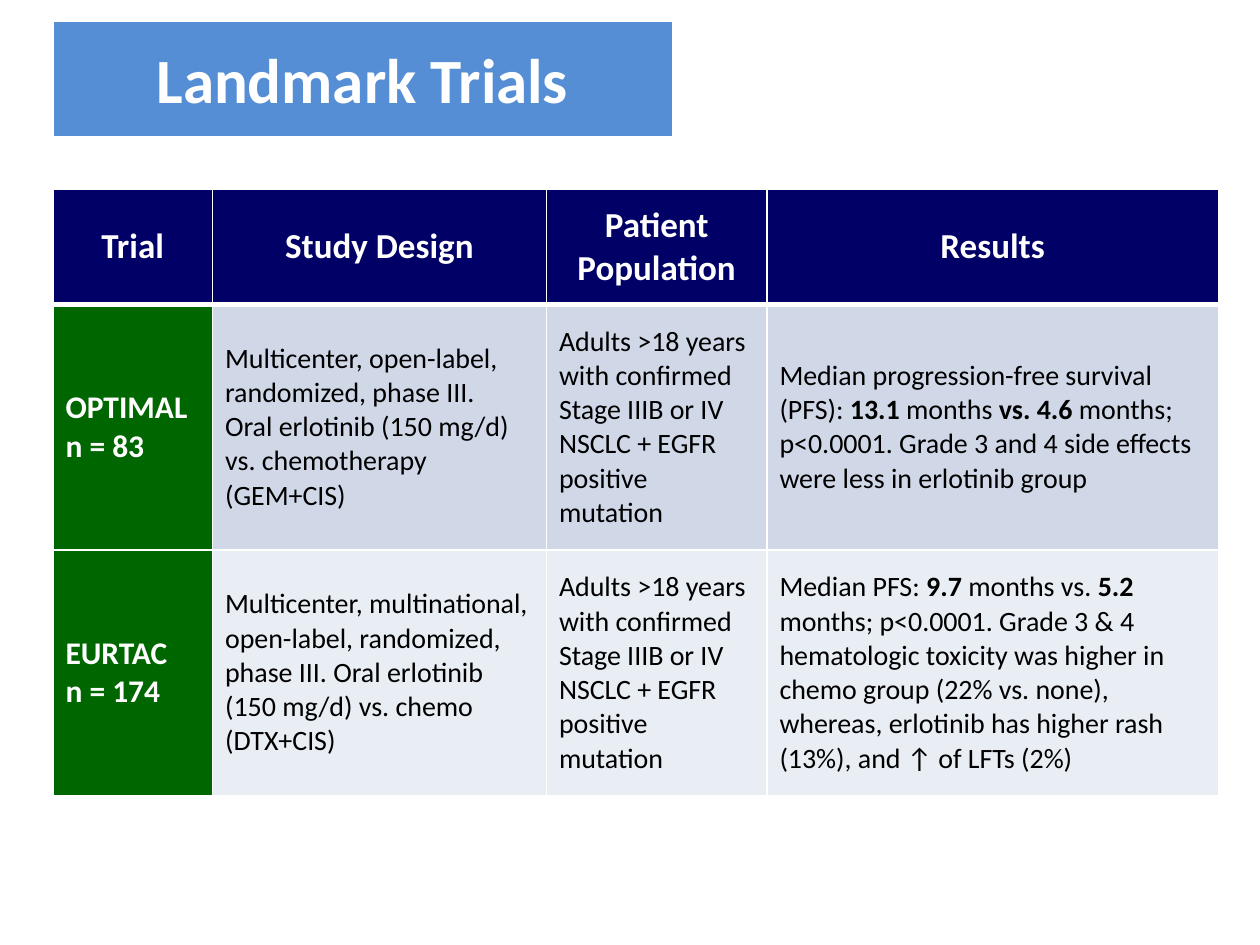
from lxml import etree
from pptx import Presentation
from pptx.dml.color import RGBColor
from pptx.enum.shapes import MSO_SHAPE
from pptx.enum.text import MSO_ANCHOR, PP_ALIGN
from pptx.oxml.ns import qn
from pptx.util import Pt

RECTANGLE = MSO_SHAPE.RECTANGLE
MIDDLE = MSO_ANCHOR.MIDDLE
LEFT, CENTER = PP_ALIGN.LEFT, PP_ALIGN.CENTER

WHITE = RGBColor(0xFF, 0xFF, 0xFF)
BLACK = RGBColor(0, 0, 0)
TITLE_BLUE = RGBColor(0x55, 0x8E, 0xD5)
HEADER_NAVY = RGBColor(0, 0, 0x66)
TRIAL_GREEN = RGBColor(0, 0x66, 0)
ROW_FILLS = [RGBColor(0xD0, 0xD8, 0xE8), RGBColor(0xE9, 0xED, 0xF4)]

FONT = "Calibri"
MARGIN_LEFT = 30.24
COLUMN_WIDTHS = [91.2, 190.8, 126, 258]
ROW_HEIGHTS = [65.9, 140.4, 140.4]

HEADERS = ["Trial", "Study Design", "Patient Population", "Results"]
POPULATION = ("Adults >18 years with confirmed Stage IIIB or IV "
              "NSCLC + EGFR positive mutation")
# Line breaks separate paragraphs; ** switches bold on and off.
TRIALS = [
    ["OPTIMAL\nn = 83",
     "Multicenter, open-label, randomized, phase III.\n"
     "Oral erlotinib (150 mg/d) vs. chemotherapy (GEM+CIS)",
     POPULATION,
     "Median progression-free survival (PFS): **13.1** months **vs. 4.6 **months; "
     "p<0.0001. Grade 3 and 4 side effects were less in erlotinib group"],
    ["EURTAC\nn = 174",
     "Multicenter, multinational, open-label, randomized, phase III. "
     "Oral erlotinib (150 mg/d) vs. chemo (DTX+CIS)",
     POPULATION,
     "Median PFS: **9.7** months vs. **5.2** months; p<0.0001. Grade 3 & 4 "
     "hematologic toxicity was higher in chemo group (22% vs. none), whereas, "
     "erlotinib has higher rash (13%), and ↑ of LFTs (2%)"],
]


def write_text(text_frame, text, size, color, bold=False, align=LEFT):
    """Write one paragraph per line, toggling bold at each ** mark."""
    for index, line in enumerate(text.split("\n")):
        paragraph = text_frame.add_paragraph() if index else text_frame.paragraphs[0]
        paragraph.alignment = align
        for part_index, part in enumerate(line.split("**")):
            run = paragraph.add_run()
            run.text = part
            run.font.name = FONT
            run.font.size = Pt(size)
            run.font.bold = bold or part_index % 2 == 1
            run.font.color.rgb = color


def add_title(slide, text):
    shape = slide.shapes.add_shape(
        RECTANGLE, Pt(MARGIN_LEFT), Pt(12), Pt(354), Pt(66))
    shape.shadow.inherit = False
    shape.fill.solid()
    shape.fill.fore_color.rgb = TITLE_BLUE
    shape.line.color.rgb = WHITE
    shape.line.width = Pt(0.75)
    shape.text_frame.word_wrap = True
    shape.text_frame.vertical_anchor = MIDDLE
    write_text(shape.text_frame, text, 36, WHITE, bold=True, align=CENTER)


def set_borders(cell, bottom_width=1):
    properties = cell._tc.get_or_add_tcPr()
    widths = {"a:lnL": 1, "a:lnR": 1, "a:lnT": 1, "a:lnB": bottom_width}
    for tag, width in widths.items():
        border = etree.SubElement(properties, qn(tag), w=str(Pt(width)))
        fill = etree.SubElement(border, qn("a:solidFill"))
        etree.SubElement(fill, qn("a:srgbClr"), val=str(WHITE))


def fill_cell(cell, text, fill, bottom_width=1, **text_format):
    set_borders(cell, bottom_width)
    cell.fill.solid()
    cell.fill.fore_color.rgb = fill
    cell.vertical_anchor = MIDDLE
    write_text(cell.text_frame, text, **text_format)


def add_trial_table(slide):
    table = slide.shapes.add_table(
        len(ROW_HEIGHTS), len(COLUMN_WIDTHS), Pt(MARGIN_LEFT), Pt(108),
        Pt(sum(COLUMN_WIDTHS)), Pt(sum(ROW_HEIGHTS))).table
    for column, width in zip(table.columns, COLUMN_WIDTHS):
        column.width = Pt(width)
    for row, height in zip(table.rows, ROW_HEIGHTS):
        row.height = Pt(height)

    for cell, header in zip(table.rows[0].cells, HEADERS):
        fill_cell(cell, header, HEADER_NAVY, bottom_width=3,
                  size=20, color=WHITE, bold=True, align=CENTER)
    for row_index, (trial, row_fill) in enumerate(zip(TRIALS, ROW_FILLS), start=1):
        name, *details = trial
        fill_cell(table.cell(row_index, 0), name, TRIAL_GREEN,
                  size=18, color=WHITE, bold=True)
        for column_index, detail in enumerate(details, start=1):
            fill_cell(table.cell(row_index, column_index), detail, row_fill,
                      size=16, color=BLACK)


def main():
    presentation = Presentation()
    presentation.slide_width = Pt(720)
    presentation.slide_height = Pt(540)
    slide = presentation.slides.add_slide(presentation.slide_layouts[6])
    add_title(slide, "Landmark Trials")
    add_trial_table(slide)
    presentation.save("out.pptx")


if __name__ == "__main__":
    main()
